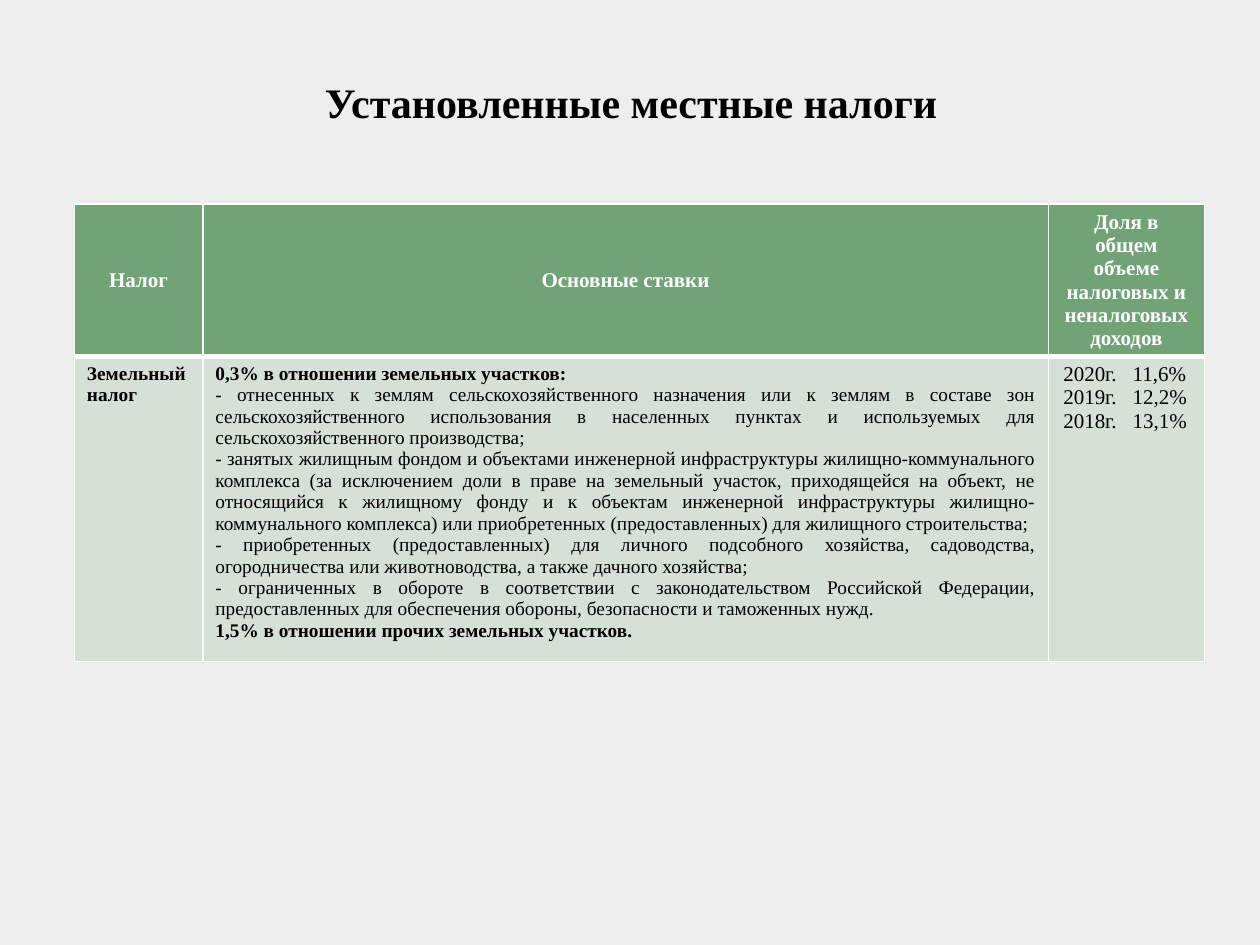
import lxml.etree
import pptx
import pptx.dml.color
import pptx.enum.text
import pptx.oxml.ns
import pptx.util

Inches = pptx.util.Inches
RGBColor = pptx.dml.color.RGBColor
ALIGN = pptx.enum.text.PP_ALIGN
ANCHOR = pptx.enum.text.MSO_ANCHOR

FONT = "Times New Roman"
BACKGROUND = RGBColor(0xEE, 0xEE, 0xEE)
HEADER_GREEN = RGBColor(0x72, 0xA3, 0x76)
BODY_GREEN = RGBColor(0xD5, 0xE0, 0xD6)
WHITE = RGBColor(0xFF, 0xFF, 0xFF)
BLACK = RGBColor(0, 0, 0)

COLUMN_WIDTHS = (1.02, 6.71, 1.24)
ROW_HEIGHTS = (1.2, 2.42)
HEADERS = (
    ("Налог", ANCHOR.MIDDLE),
    ("Основные ставки", ANCHOR.MIDDLE),
    ("Доля в общем объеме налоговых и неналоговых доходов", ANCHOR.TOP),
)
REDUCED_RATE = "0,3% в отношении земельных участков:"
REDUCED_RATE_PLOTS = (
    "- отнесенных к землям сельскохозяйственного назначения или к землям в составе зон "
    "сельскохозяйственного использования в населенных пунктах и используемых для "
    "сельскохозяйственного производства;",
    "- занятых жилищным фондом и объектами инженерной инфраструктуры жилищно-коммунального "
    "комплекса (за исключением доли в праве на земельный участок, приходящейся на объект, не "
    "относящийся к жилищному фонду и к объектам инженерной инфраструктуры "
    "жилищно-коммунального комплекса) или приобретенных (предоставленных) для жилищного "
    "строительства;",
    "- приобретенных (предоставленных) для личного подсобного хозяйства, садоводства, "
    "огородничества или животноводства, а также дачного хозяйства;",
    "- ограниченных в обороте в соответствии с законодательством Российской Федерации, "
    "предоставленных для обеспечения обороны, безопасности и таможенных нужд.",
)
GENERAL_RATE = "1,5% в отношении прочих земельных участков."
SHARES = (("2020г.", "11,6%"), ("2019г.", "12,2%"), ("2018г.", "13,1%"))


def add_span(para, text, size, color=BLACK, bold=False):
    span = para.add_run()
    span.text = text
    span.font.name = FONT
    span.font.size = pptx.util.Pt(size)
    span.font.bold = bold
    span.font.color.rgb = color


def write_cell(cell, lines, size, color=BLACK):
    """Fill a cell with paragraphs given as (text, alignment, bold)."""
    frame = cell.text_frame
    for index, (text, alignment, bold) in enumerate(lines):
        para = frame.add_paragraph() if index else frame.paragraphs[0]
        para.alignment = alignment
        add_span(para, text, size, color, bold)


def set_tab(para, position):
    properties = para._p.get_or_add_pPr()
    tabs = lxml.etree.SubElement(properties, pptx.oxml.ns.qn("a:tabLst"))
    lxml.etree.SubElement(tabs, pptx.oxml.ns.qn("a:tab"), pos=str(position), algn="l")


def style_cell(cell, fill, bottom_width=1):
    """Give a cell white borders and a solid fill."""
    properties = cell._tc.get_or_add_tcPr()
    qn = pptx.oxml.ns.qn
    for side, width in (("L", 1), ("R", 1), ("T", 1), ("B", bottom_width)):
        line = lxml.etree.SubElement(
            properties, qn(f"a:ln{side}"), w=str(pptx.util.Pt(width)))
        solid = lxml.etree.SubElement(line, qn("a:solidFill"))
        lxml.etree.SubElement(solid, qn("a:srgbClr"), val=str(WHITE))
    cell.fill.solid()
    cell.fill.fore_color.rgb = fill


def place_title(page, left, top, width, height):
    title = page.shapes.title
    title.left, title.top, title.width, title.height = left, top, width, height
    title.text_frame.vertical_anchor = ANCHOR.BOTTOM
    para = title.text_frame.paragraphs[0]
    para.alignment = ALIGN.CENTER
    add_span(para, "Установленные местные налоги", 24, bold=True)


def place_tax_table(page, left, top, width, height):
    table = page.shapes.add_table(
        len(ROW_HEIGHTS), len(COLUMN_WIDTHS), left, top, width, height).table
    for column, size in zip(table.columns, COLUMN_WIDTHS):
        column.width = Inches(size)
    for row, size in zip(table.rows, ROW_HEIGHTS):
        row.height = Inches(size)

    for index, (text, anchor) in enumerate(HEADERS):
        cell = table.cell(0, index)
        style_cell(cell, HEADER_GREEN, bottom_width=3)
        style_cell(table.cell(1, index), BODY_GREEN)
        cell.vertical_anchor = anchor
        write_cell(cell, [(text, ALIGN.CENTER, True)], 12, WHITE)

    write_cell(table.cell(1, 0), [("Земельный налог", ALIGN.LEFT, True)], 11)
    rates = [(REDUCED_RATE, ALIGN.LEFT, True)]
    rates += [(text, ALIGN.JUSTIFY, False) for text in REDUCED_RATE_PLOTS]
    rates.append((GENERAL_RATE, ALIGN.JUSTIFY, True))
    write_cell(table.cell(1, 1), rates, 11)

    share_cell = table.cell(1, 2)
    write_cell(share_cell, [("\t".join(share), ALIGN.LEFT, False) for share in SHARES], 12)
    share_cell.margin_left = Inches(0.12)
    for para in share_cell.text_frame.paragraphs:
        set_tab(para, Inches(0.55))


def main():
    deck = pptx.Presentation()
    deck.slide_width, deck.slide_height = Inches(10), Inches(7.5)
    page = deck.slides.add_slide(deck.slide_layouts.get_by_name("Title Only"))
    page.background.fill.solid()
    page.background.fill.fore_color.rgb = BACKGROUND
    place_title(page, Inches(2.01), Inches(0.6), Inches(6), Inches(0.46))
    place_tax_table(page, Inches(0.59), Inches(1.62),
                    Inches(sum(COLUMN_WIDTHS)), Inches(sum(ROW_HEIGHTS)))
    deck.save("out.pptx")


if __name__ == "__main__":
    main()
